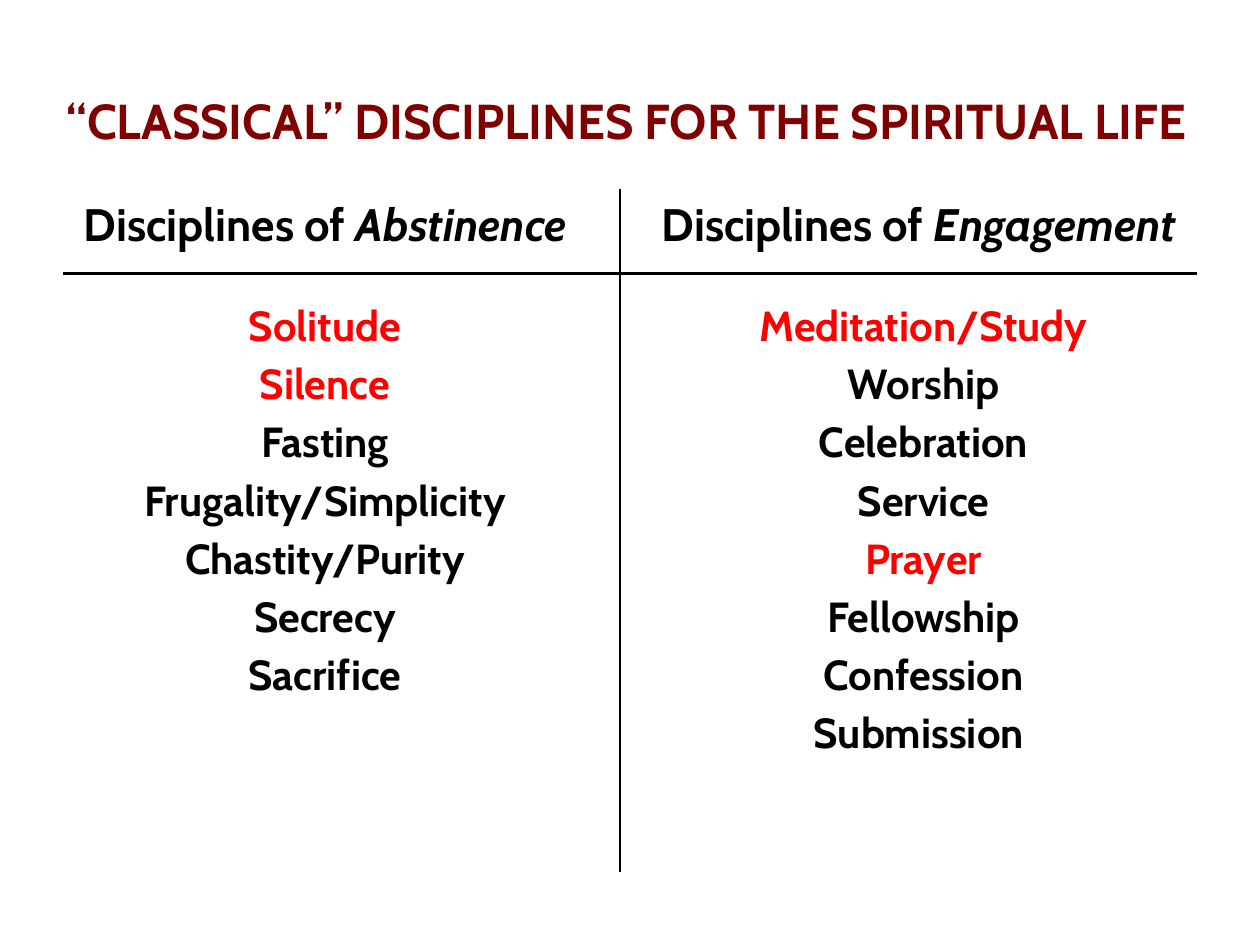
import pptx
import pptx.dml.color
import pptx.enum.shapes
import pptx.enum.text
import pptx.oxml.ns
import pptx.util
from lxml import etree
from pptx.util import Inches

FONT = "Cabin"
BLACK, RED, MAROON = "000000", "FF0000", "800000"
COLUMN_DIVIDER = Inches(4.92)

ABSTINENCE = ["Solitude", "Silence", "Fasting", "Frugality/Simplicity",
              "Chastity/Purity", "Secrecy", "Sacrifice"]
ENGAGEMENT = ["Meditation/Study", "Worship", "Celebration", "Service",
              "Prayer", "Fellowship", "Confession", "Submission "]
HIGHLIGHTED = {"Solitude", "Silence", "Meditation/Study", "Prayer"}


def rgb(hex_color):
    return pptx.dml.color.RGBColor.from_string(hex_color)


def format_paragraph(paragraph, size, color):
    paragraph.alignment = pptx.enum.text.PP_ALIGN.CENTER
    paragraph.font.name = FONT
    paragraph.font.size = pptx.util.Pt(size)
    paragraph.font.bold = True
    paragraph.font.color.rgb = rgb(color)


def prepare_frame(frame, anchor):
    frame.word_wrap = True
    frame.auto_size = pptx.enum.text.MSO_AUTO_SIZE.NONE
    frame.vertical_anchor = anchor


def set_title(slide, text, left, top, width, height):
    title = slide.shapes.title
    title.left, title.top, title.width, title.height = left, top, width, height
    prepare_frame(title.text_frame, pptx.enum.text.MSO_ANCHOR.MIDDLE)
    title.text_frame.text = text
    format_paragraph(title.text_frame.paragraphs[0], 28, MAROON)


def add_heading(slide, kind, left, top, width, height):
    frame = slide.shapes.add_textbox(left, top, width, height).text_frame
    prepare_frame(frame, pptx.enum.text.MSO_ANCHOR.MIDDLE)
    heading = frame.paragraphs[0]
    heading.add_run().text = "Disciplines of "
    kind_run = heading.add_run()
    kind_run.text = kind + " "
    kind_run.font.italic = True
    format_paragraph(heading, 26, BLACK)


def add_disciplines(slide, disciplines, left, top, width, height):
    frame = slide.shapes.add_textbox(left, top, width, height).text_frame
    prepare_frame(frame, pptx.enum.text.MSO_ANCHOR.TOP)
    for index, discipline in enumerate(disciplines):
        entry = frame.add_paragraph() if index else frame.paragraphs[0]
        entry.text = discipline
        if index:
            entry.space_before = pptx.util.Pt(4.4)
        format_paragraph(entry, 24, RED if discipline in HIGHLIGHTED else BLACK)


def add_rule(slide, *ends):
    rule = slide.shapes.add_connector(
        pptx.enum.shapes.MSO_CONNECTOR.STRAIGHT, *ends)
    rule.line.color.rgb = rgb(BLACK)
    rule.line.width = pptx.util.Pt(1.5)
    etree.SubElement(rule._element.spPr, pptx.oxml.ns.qn("a:effectLst"))


def main():
    deck = pptx.Presentation()
    deck.slide_width, deck.slide_height = Inches(10), Inches(7.5)
    slide = deck.slides.add_slide(deck.slide_layouts.get_by_name("Title Only"))

    set_title(slide, "“CLASSICAL” DISCIPLINES FOR THE SPIRITUAL LIFE",
              Inches(0.27), Inches(0.58), Inches(9.4), Inches(0.75))

    columns = [
        ("Abstinence", ABSTINENCE, Inches(0.33), Inches(4.59), Inches(0.33)),
        ("Engagement", ENGAGEMENT, COLUMN_DIVIDER, Inches(4.83), Inches(5.08)),
    ]
    for kind, disciplines, heading_left, heading_width, list_left in columns:
        add_heading(slide, kind, heading_left, Inches(1.42),
                    heading_width, Inches(0.7))
        add_disciplines(slide, disciplines, list_left, Inches(2.33),
                        Inches(4.5), Inches(5))

    add_rule(slide, Inches(0.5), Inches(2.17), Inches(9.5), Inches(2.17))
    add_rule(slide, COLUMN_DIVIDER, Inches(1.5), COLUMN_DIVIDER, Inches(6.92))

    deck.save("out.pptx")


if __name__ == "__main__":
    main()
